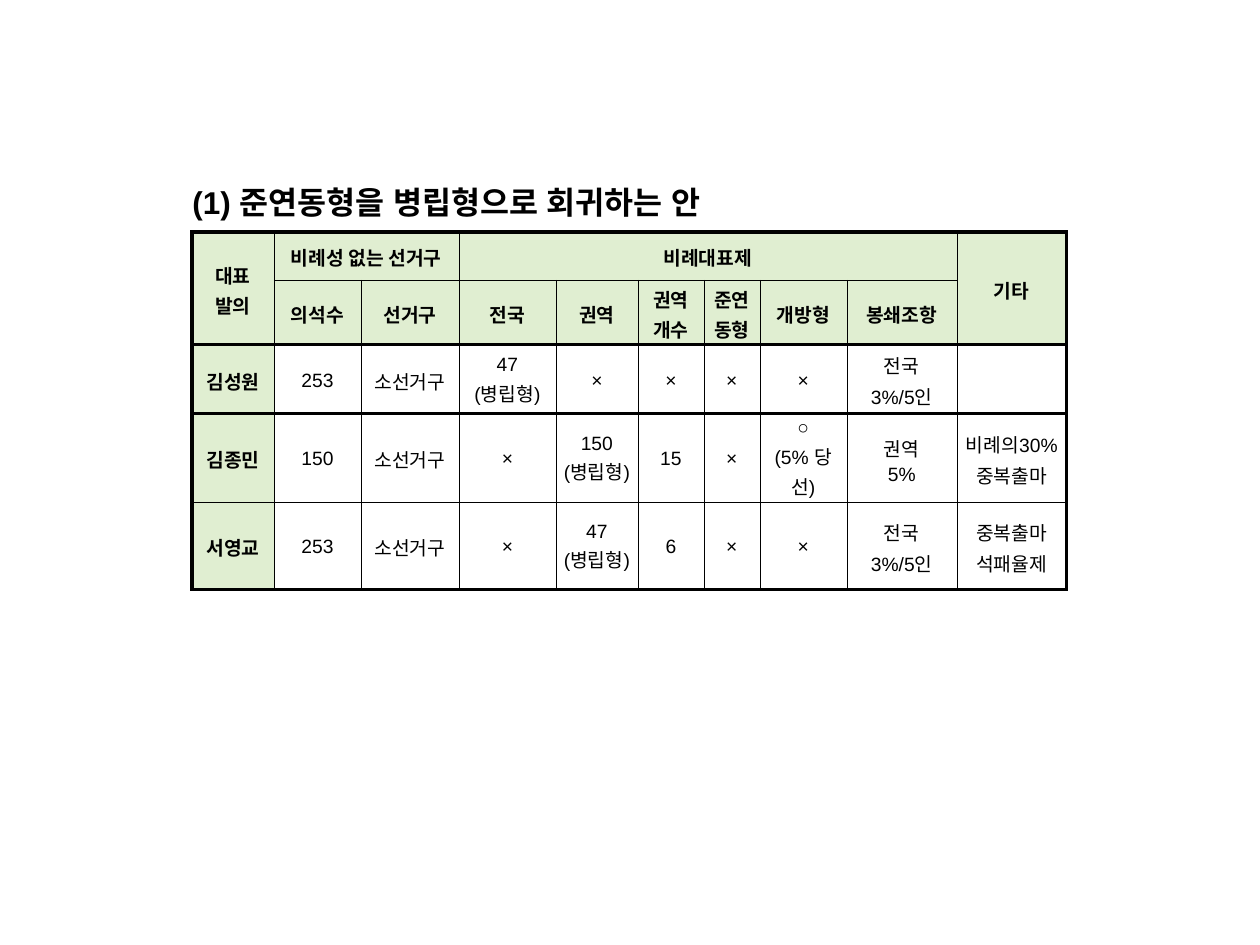
from dataclasses import dataclass
from itertools import product
from typing import Any

from lxml import etree
from pptx import Presentation
from pptx import util as u
from pptx.dml.color import RGBColor
from pptx.enum import text
from pptx.oxml import ns

SCALE = 914400 / 126


@dataclass(frozen=True)
class Theme:
    font: str = "Arial"
    ink: str = "000000"
    header: str = "E0EED1"
    title_size: int = 18
    body_size: int = 11
    thin: float = 0.28
    thick: float = 1.98


@dataclass(frozen=True)
class Span:
    row: int
    col: int
    rows: int
    cols: int


T = Theme()
COLS = [82, 87, 98, 97, 82, 66, 56, 87, 110, 110]
ROWS = [48, 65, 69, 88, 88]
THICK_ROWS = {0, 2, 3, len(ROWS)}
THICK_COLS = {0, len(COLS)}
NO_STYLE = "{2D5ABB26-0587-4C30-8999-92F81FD0307C}"
SPANS = [Span(0, 0, 2, 1), Span(0, 1, 1, 2), Span(0, 3, 1, 6), Span(0, 9, 2, 1)]
CELLS = [
    ["대표 발의", "비례성 없는 선거구", "", "비례대표제", "", "", "", "", "", "기타"],
    ["", "의석수", "선거구", "전국", "권역", "권역 개수", "준연동형", "개방형", "봉쇄조항", ""],
    ["김성원", "253", "소선거구", "47\n(병립형)", "×", "×", "×", "×", "전국\n3%/5인", ""],
    ["김종민", "150", "소선거구", "×", "150\n(병립형)", "15", "×", "○\n(5% 당선)",
     "권역\n5%", "비례의30% 중복출마"],
    ["서영교", "253", "소선거구", "×", "47\n(병립형)", "6", "×", "×",
     "전국\n3%/5인", "중복출마\n석패율제"],
]


def px(n: int) -> u.Emu:
    return u.Emu(round(n * SCALE))


def assign(obj: Any, values: dict[str, Any]) -> None:
    for name, value in values.items():
        setattr(obj, name, value)


def write(tf: Any, content: str, size: int, bold: bool, fmt: dict[str, Any]) -> None:
    for i, line in enumerate(content.split("\n")):
        p = tf.add_paragraph() if i else tf.paragraphs[0]
        assign(p, fmt)
        r = p.add_run()
        r.text = line
        assign(r.font, {"name": T.font, "size": u.Pt(size), "bold": bold})
        r.font.color.rgb = RGBColor.from_string(T.ink)


def border(cell: Any, side: str, thick: bool) -> None:
    ln = etree.SubElement(cell._tc.get_or_add_tcPr(), ns.qn(f"a:ln{side}"))
    ln.set("w", str(u.Pt(T.thick if thick else T.thin)))
    fill = etree.SubElement(ln, ns.qn("a:solidFill"))
    etree.SubElement(fill, ns.qn("a:srgbClr")).set("val", T.ink)


def style_cell(cell: Any, row: int, col: int) -> None:
    bottom, right = row + cell.span_height, col + cell.span_width
    border(cell, "L", col in THICK_COLS)
    border(cell, "R", right in THICK_COLS)
    border(cell, "T", row in THICK_ROWS)
    border(cell, "B", bottom in THICK_ROWS)
    is_header = row < 2 or col == 0
    if is_header:
        cell.fill.solid()
        cell.fill.fore_color.rgb = RGBColor.from_string(T.header)
    else:
        cell.fill.background()
    assign(cell, {"margin_left": px(5), "margin_right": px(5), "margin_top": px(1),
                  "margin_bottom": px(1), "vertical_anchor": text.MSO_ANCHOR.MIDDLE})
    if CELLS[row][col]:
        write(cell.text_frame, CELLS[row][col], T.body_size, is_header,
              {"alignment": text.PP_ALIGN.CENTER, "line_spacing": 1.1})


def add_bills_table(s: Any) -> None:
    frame = s.shapes.add_table(len(ROWS), len(COLS), px(192), px(232),
                               px(sum(COLS)), px(sum(ROWS)))
    table = frame.table
    assign(table, {"first_row": False, "horz_banding": False})
    table._tbl.tblPr.find(ns.qn("a:tableStyleId")).text = NO_STYLE
    for column, width in zip(table.columns, COLS):
        column.width = px(width)
    for row, height in zip(table.rows, ROWS):
        row.height = px(height)
    for sp in SPANS:
        end = table.cell(sp.row + sp.rows - 1, sp.col + sp.cols - 1)
        table.cell(sp.row, sp.col).merge(end)
    for row, col in product(range(len(ROWS)), range(len(COLS))):
        cell = table.cell(row, col)
        if not cell.is_spanned:
            style_cell(cell, row, col)


def add_title(s: Any) -> None:
    tf = s.shapes.add_textbox(px(168), px(154), px(597), px(66)).text_frame
    assign(tf, {"word_wrap": True, "auto_size": text.MSO_AUTO_SIZE.SHAPE_TO_FIT_TEXT})
    write(tf, "(1) 준연동형을 병립형으로 회귀하는 안", T.title_size, True,
          {"alignment": text.PP_ALIGN.JUSTIFY, "line_spacing": 1.6,
           "space_after": u.Pt(3)})
    p = tf.paragraphs[0]
    ea = etree.SubElement(p.runs[0].font._element, ns.qn("a:ea"))
    ea.set("typeface", T.font)
    pPr = p._p.get_or_add_pPr()
    pPr.set("marL", "0")
    pPr.set("indent", str(px(12)))


def main() -> None:
    prs = Presentation()
    assign(prs, {"slide_width": px(1260), "slide_height": px(945)})
    s = prs.slides.add_slide(prs.slide_layouts[6])
    add_bills_table(s)
    add_title(s)
    prs.save("out.pptx")


if __name__ == "__main__":
    main()
